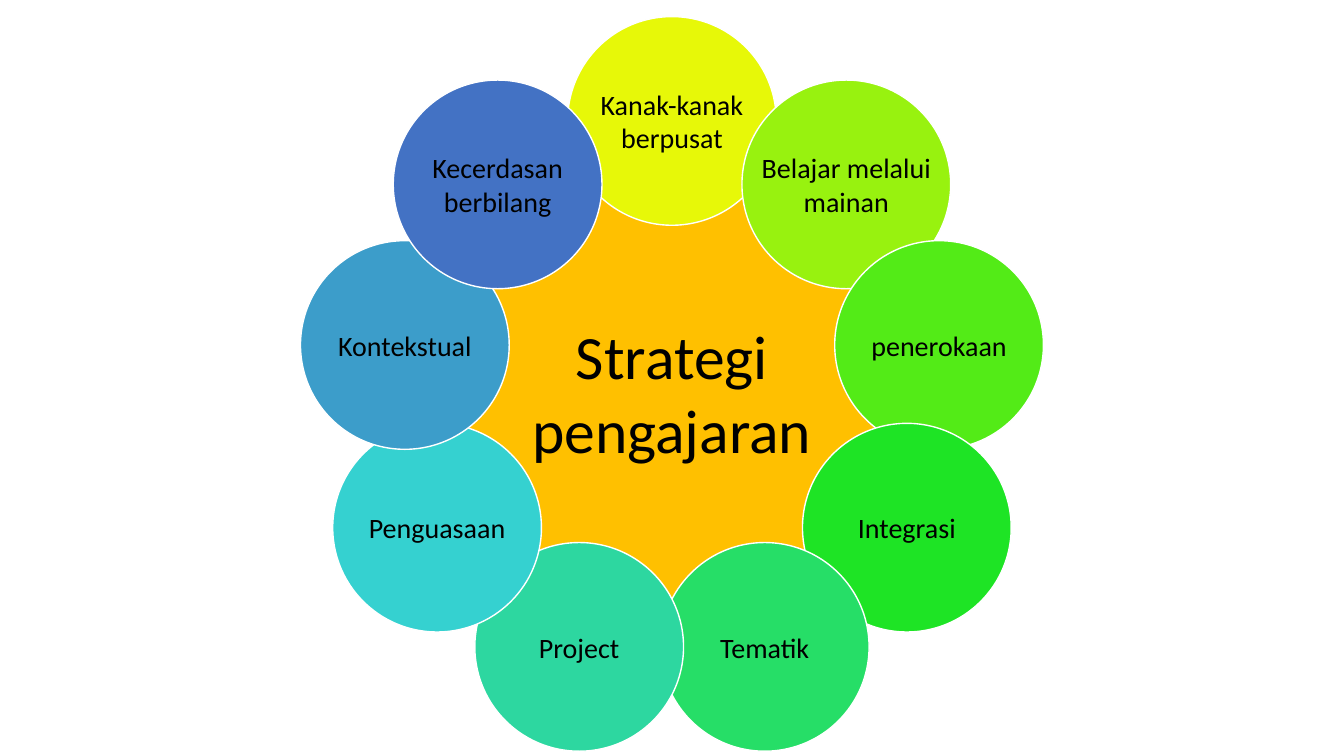
import math
from dataclasses import dataclass

import pptx
import pptx.dml.color
import pptx.enum.shapes
import pptx.enum.text
import pptx.util

Inches = pptx.util.Inches


@dataclass(frozen=True)
class Theme:
    font: str = "Calibri"
    ink: str = "000000"
    edge: str = "FFFFFF"
    hub: str = "FFC000"
    big: int = 44
    small: int = 20


THEME = Theme()

# Ring geometry in inches
MID_X, MID_Y = 6.665, 3.89
ORBIT = 2.69
HUB_SIZE = 4.14
PETAL_SIZE = HUB_SIZE / 2

# Clockwise from the top
PETALS = [
    ("Kanak-kanak berpusat", "E7F808"),
    ("Belajar melalui mainan", "98F20F"),
    ("penerokaan", "53EB17"),
    ("Integrasi", "1EE425"),
    ("Tematik", "26DE67"),
    ("Project", "2DD7A0"),
    ("Penguasaan", "35D1D0"),
    ("Kontekstual", "3C9DCA"),
    ("Kecerdasan berbilang", "4372C4"),
]


def rgb(code):
    return pptx.dml.color.RGBColor.from_string(code)


def add_disc(group, box, color):
    disc = group.shapes.add_shape(pptx.enum.shapes.MSO_SHAPE.OVAL, *box)
    disc.shadow.inherit = False
    disc.fill.solid()
    disc.fill.fore_color.rgb = rgb(color)
    disc.line.color.rgb = rgb(THEME.edge)
    disc.line.width = pptx.util.Pt(1)


def add_label(group, box, text, size, inset):
    frame = group.shapes.add_textbox(*box).text_frame
    frame.word_wrap = True
    frame.vertical_anchor = pptx.enum.text.MSO_ANCHOR.MIDDLE
    frame.margin_left = frame.margin_right = Inches(inset)
    frame.margin_top = frame.margin_bottom = Inches(inset)
    frame.text = text
    line = frame.paragraphs[0]
    line.alignment = pptx.enum.text.PP_ALIGN.CENTER
    font = line.runs[0].font
    font.name = THEME.font
    font.size = pptx.util.Pt(size)
    font.color.rgb = rgb(THEME.ink)


def add_circle(group, x, y, width, text, color, size, inset):
    """Add a labelled disc centred on x, y; the label spans its full width."""
    box = [Inches(v) for v in (x - width / 2, y - width / 2, width, width)]
    add_disc(group, box, color)
    add_label(group, box, text, size, inset)


def main():
    deck = pptx.Presentation()
    deck.slide_width = Inches(13.33)
    deck.slide_height = Inches(7.5)
    slide = deck.slides.add_slide(deck.slide_layouts[6])
    ring = slide.shapes.add_group_shape()

    # Hub
    add_circle(ring, MID_X, MID_Y, HUB_SIZE, "Strategi pengajaran",
               THEME.hub, THEME.big, 0.06)

    # Petals at equal angles around the hub
    for i, (text, color) in enumerate(PETALS):
        angle = math.tau * i / len(PETALS)
        x = MID_X + ORBIT * math.sin(angle)
        y = MID_Y - ORBIT * math.cos(angle)
        add_circle(ring, x, y, PETAL_SIZE, text, color, THEME.small, 0.03)

    deck.save("out.pptx")


if __name__ == "__main__":
    main()
